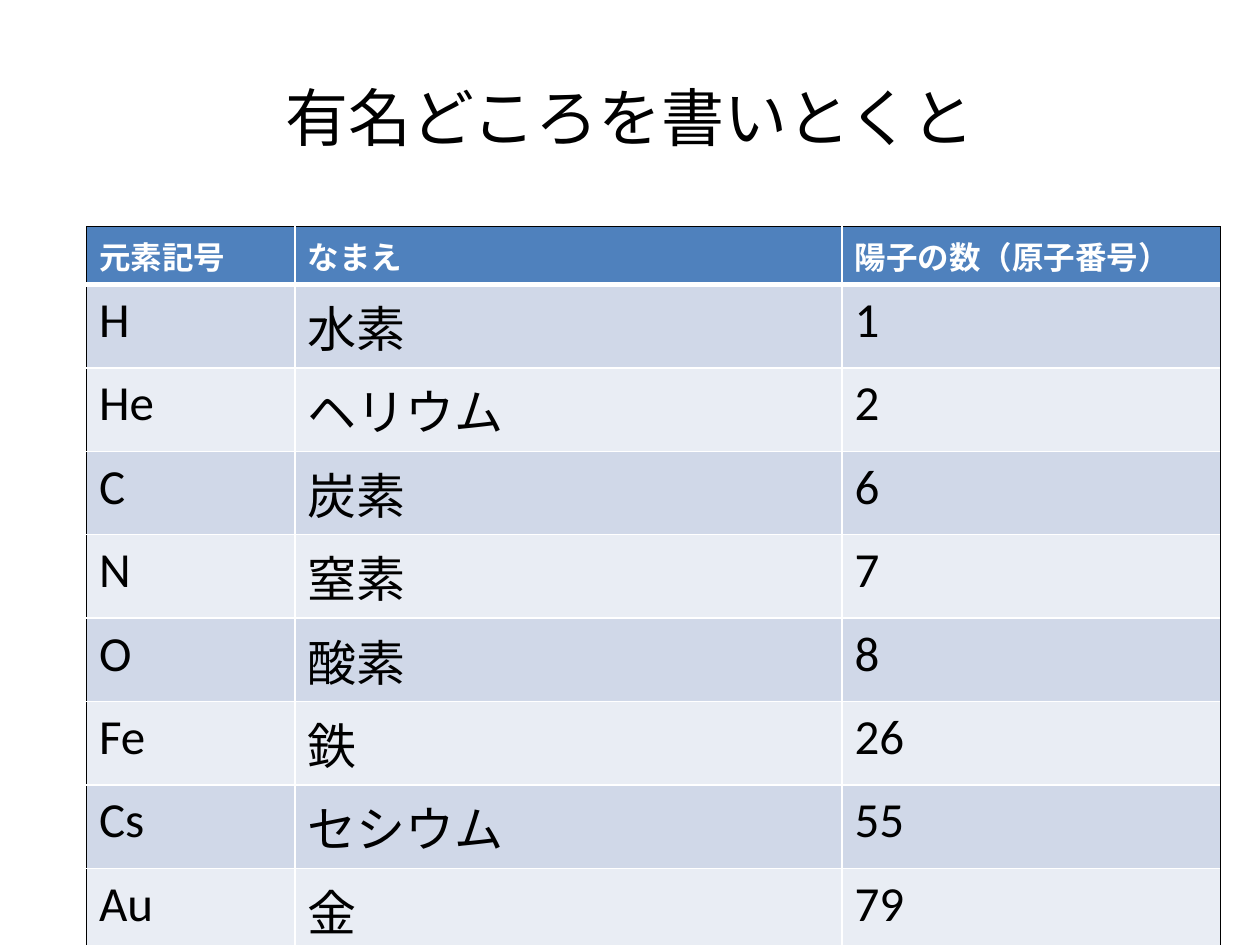
import pptx
import pptx.dml.color
import pptx.enum.lang
import pptx.enum.text
import pptx.oxml
import pptx.oxml.ns
import pptx.util

Pt = pptx.util.Pt

FONT = "Calibri"
COLORS = {
    "text": "000000",
    "header_text": "FFFFFF",
    "header": "4F81BD",
    "odd_row": "D0D8E8",
    "even_row": "E9EDF4",
    "outer_line": "000000",
    "inner_line": "FFFFFF",
}
HEADINGS = ("元素記号", "なまえ", "陽子の数（原子番号）")
ELEMENTS = (
    ("H", "水素", 1),
    ("He", "ヘリウム", 2),
    ("C", "炭素", 6),
    ("N", "窒素", 7),
    ("O", "酸素", 8),
    ("Fe", "鉄", 26),
    ("Cs", "セシウム", 55),
    ("Au", "金", 79),
)
COLUMN_WIDTHS = (119.2, 312.5, 216)
HEADER_HEIGHT = 33.2
ROW_HEIGHT = 47.67


def rgb(name):
    return pptx.dml.color.RGBColor.from_string(COLORS[name])


def add_span(para, text, size, color, bold=False):
    span = para.add_run()
    span.text = text
    font = span.font
    font.name, font.size, font.bold = FONT, Pt(size), bold
    font.color.rgb = rgb(color)
    font.language_id = pptx.enum.lang.MSO_LANGUAGE_ID.JAPANESE


def add_title(slide, text):
    box = slide.shapes.add_textbox(Pt(36), Pt(21.6), Pt(648), Pt(90))
    frame = box.text_frame
    frame.word_wrap = True
    frame.vertical_anchor = pptx.enum.text.MSO_ANCHOR.MIDDLE
    para = frame.paragraphs[0]
    para.alignment = pptx.enum.text.PP_ALIGN.CENTER
    add_span(para, text, 36, "text")


def add_border(cell, side, color, width):
    """Draw one edge of a cell; side is L, R, T or B."""
    line = pptx.oxml.parse_xml(
        f'<a:ln{side} {pptx.oxml.ns.nsdecls("a")} w="{Pt(width)}">'
        f'<a:solidFill><a:srgbClr val="{COLORS[color]}"/></a:solidFill>'
        f"</a:ln{side}>"
    )
    cell._tc.get_or_add_tcPr().append(line)


def style_cell(cell, row, column, last_row, last_column):
    """Set the borders, dark on the table's outline, and then the fill."""
    outer_edges = {
        "L": column == 0,
        "R": column == last_column,
        "T": row == 0,
        "B": row == last_row,
    }
    for side, is_outer in outer_edges.items():
        below_header = (row, side) in ((0, "B"), (1, "T"))
        if is_outer:
            add_border(cell, side, "outer_line", 0.5)
        else:
            add_border(cell, side, "inner_line", 3 if below_header else 1)
    cell.fill.solid()
    band = "odd_row" if row % 2 else "even_row"
    cell.fill.fore_color.rgb = rgb(band if row else "header")


def add_element_table(slide):
    rows = (HEADINGS, *ELEMENTS)
    heights = [HEADER_HEIGHT] + [ROW_HEIGHT] * len(ELEMENTS)
    table = slide.shapes.add_table(
        len(rows), len(HEADINGS), Pt(49.5), Pt(129.4),
        Pt(sum(COLUMN_WIDTHS)), Pt(sum(heights)),
    ).table
    for column, width in zip(table.columns, COLUMN_WIDTHS):
        column.width = Pt(width)
    for i, values in enumerate(rows):
        table.rows[i].height = Pt(heights[i])
        for j, value in enumerate(values):
            cell = table.cell(i, j)
            style_cell(cell, i, j, len(rows) - 1, len(HEADINGS) - 1)
            para = cell.text_frame.paragraphs[0]
            if i == 0:
                add_span(para, value, 18, "header_text", bold=True)
            else:
                add_span(para, str(value), 28, "text")


def main():
    deck = pptx.Presentation()
    deck.slide_width, deck.slide_height = Pt(720), Pt(540)
    slide = deck.slides.add_slide(deck.slide_layouts[6])
    add_title(slide, "有名どころを書いとくと")
    add_element_table(slide)
    deck.save("out.pptx")


if __name__ == "__main__":
    main()
